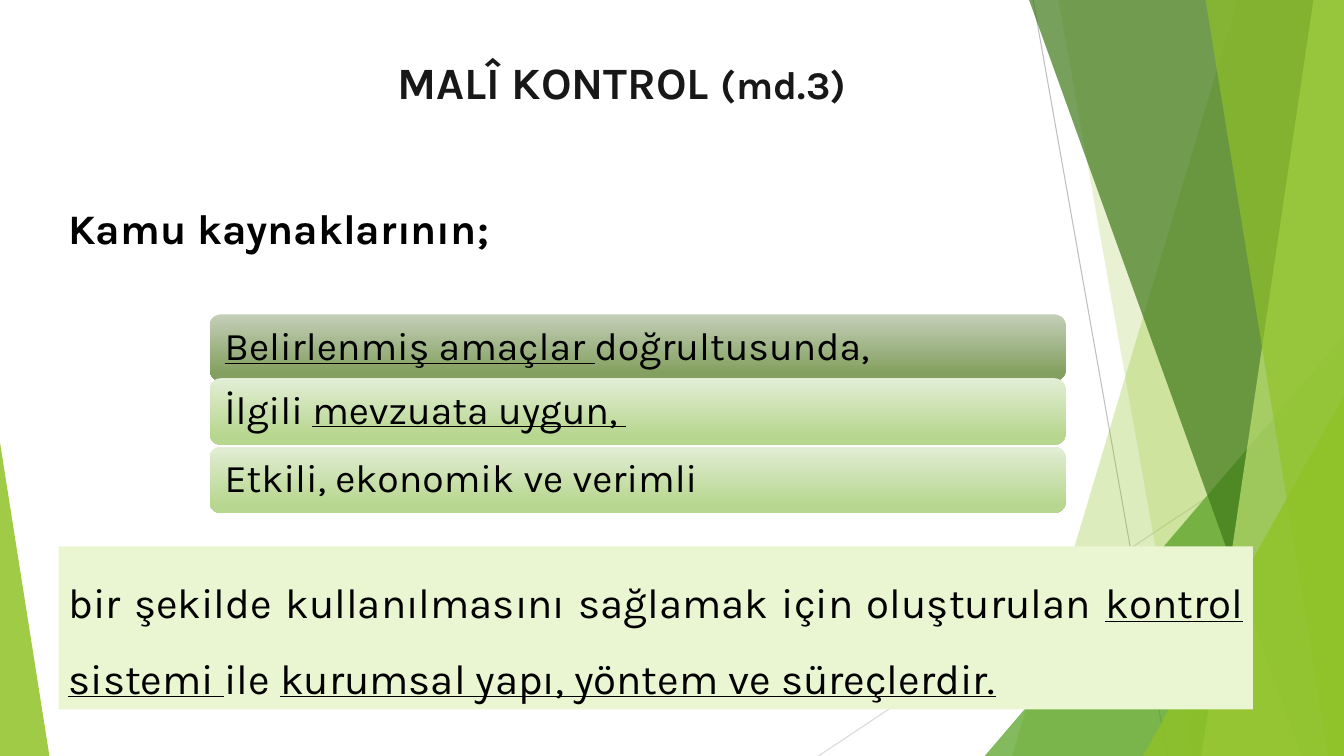
from dataclasses import dataclass

from pptx import Presentation
from pptx.dml.color import RGBColor
from pptx.enum.shapes import MSO_CONNECTOR as Conn, MSO_SHAPE as Shape
from pptx.enum.text import MSO_ANCHOR as Anchor, PP_ALIGN as Align
from pptx.oxml.xmlchemy import OxmlElement
from pptx.util import Pt


@dataclass(frozen=True)
class Theme:
    font: str = "Karla"
    title_size: float = 32
    body_size: float = 30
    bar_size: float = 28
    title: str = "181818"
    text: str = "000000"
    white: str = "FFFFFF"
    panel: str = "EAF6D1"
    rule_dark: str = "BFBFBF"
    rule_light: str = "D9D9D9"
    lime: str = "90C226"
    pale_lime: str = "C0E474"
    green: str = "54A021"
    forest: str = "3F7819"
    olive_bar: tuple[str, str] = ("C4CFB8", "84A060")
    lime_bar: tuple[str, str] = ("E2EED5", "B7D68F")


@dataclass(frozen=True)
class Box:
    x: float
    y: float
    w: float
    h: float


@dataclass(frozen=True)
class Run:
    text: str
    underline: bool = False
    size: float | None = None


@dataclass(frozen=True)
class Style:
    size: float
    color: str
    bold: bool = False
    align: Align = Align.LEFT
    spacing: float = 1.0
    inset: tuple[float, float] = (7.2, 3.6)
    anchor: Anchor = Anchor.TOP


@dataclass(frozen=True)
class Rule:
    x1: float
    y1: float
    x2: float
    y2: float
    color: str


@dataclass(frozen=True)
class Facet:
    top_x: float
    bottom_x: float
    color: str
    alpha: int


@dataclass(frozen=True)
class Wedge:
    box: Box
    apex: float
    color: str
    alpha: int


@dataclass(frozen=True)
class Bar:
    colors: tuple[str, str]
    y: float
    runs: tuple[Run, ...]


T = Theme()
WIDTH, HEIGHT = 960, 540
BAR_X, BAR_W, BAR_H, BAR_PAD = 149.8, 611.3, 47.5, 2.3

RULES = (
    Rule(738, 0, 833.8, HEIGHT, T.rule_dark),
    Rule(WIDTH, 290.2, 584.6, HEIGHT, T.rule_light),
)
BACKDROP = (
    Facet(884.2, 722.9, T.lime, 30),
    Facet(756, 851.8, T.lime, 20),
    Wedge(Box(703.4, 239.8, 256.6, 300.2), 1, T.green, 72),
    Facet(735.1, 929.5, T.forest, 70),
    Facet(938.2, 858.2, T.pale_lime, 70),
    Facet(861.1, 949, T.lime, 65),
    Wedge(Box(816.5, 283, 143.5, 257), 1, T.lime, 80),
    Wedge(Box(0, 316.1, 35.3, 223.9), 0, T.lime, 85),
)
BARS = (
    Bar(T.olive_bar, 224.6, (Run("Belirlenmiş amaçlar ", True), Run("doğrultusunda,"))),
    Bar(T.lime_bar, 270.2, (Run("İlgili "), Run("mevzuata uygun, ", True))),
    Bar(T.lime_bar, 319, (Run("Etkili, ekonomik ve verimli"),)),
)
TITLE = Style(T.title_size, T.title, bold=True, align=Align.CENTER)
LEAD = Style(T.body_size, T.text, bold=True, align=Align.JUSTIFY, spacing=1.5)
BODY = Style(T.body_size, T.text, align=Align.JUSTIFY, spacing=1.5)
BAR_TEXT = Style(T.bar_size, T.text, spacing=0.9, inset=(8.4, 8.4), anchor=Anchor.MIDDLE)


def rgb(color: str) -> RGBColor:
    """Turn a hex string into a colour."""
    return RGBColor.from_string(color)


def paint(s, color: str, alpha: int = 100) -> None:
    """Fill a shape with a flat colour, without line or shadow."""
    s.shadow.inherit = False
    s.line.fill.background()
    s.fill.solid()
    s.fill.fore_color.rgb = rgb(color)
    if alpha < 100:
        node = OxmlElement("a:alpha")
        node.set("val", str(alpha * 1000))
        s.fill._xPr.find(".//{*}srgbClr").append(node)


def add_preset(slide, kind: Shape, box: Box):
    """Add a preset shape in the given box."""
    return slide.shapes.add_shape(kind, Pt(box.x), Pt(box.y), Pt(box.w), Pt(box.h))


def add_rule(slide, rule: Rule) -> None:
    """Draw a thin straight line."""
    ends = (Pt(v) for v in (rule.x1, rule.y1, rule.x2, rule.y2))
    s = slide.shapes.add_connector(Conn.STRAIGHT, *ends)
    s.line.color.rgb = rgb(rule.color)
    s.line.width = Pt(0.75)
    s._element.spPr.append(OxmlElement("a:effectLst"))


def add_facet(slide, facet: Facet) -> None:
    """Draw a full-height panel with a slanted left edge."""
    builder = slide.shapes.build_freeform(Pt(facet.top_x), 0)
    corners = ((WIDTH, 0), (WIDTH, HEIGHT), (facet.bottom_x, HEIGHT))
    builder.add_line_segments([(Pt(x), Pt(y)) for x, y in corners], close=True)
    paint(builder.convert_to_shape(), facet.color, facet.alpha)


def add_wedge(slide, wedge: Wedge) -> None:
    """Draw a right-angled triangle."""
    s = add_preset(slide, Shape.ISOSCELES_TRIANGLE, wedge.box)
    s.adjustments[0] = wedge.apex
    paint(s, wedge.color, wedge.alpha)


def write(s, runs: tuple[Run, ...], style: Style) -> None:
    """Put one styled paragraph in a shape."""
    tf = s.text_frame
    tf.word_wrap = True
    tf.vertical_anchor = style.anchor
    tf.margin_left = tf.margin_right = Pt(style.inset[0])
    tf.margin_top = tf.margin_bottom = Pt(style.inset[1])
    p = tf.paragraphs[0]
    p.alignment = style.align
    p.line_spacing = style.spacing
    p.font.name = T.font
    p.font.size = Pt(style.size)
    p.font.bold = style.bold
    p.font.color.rgb = rgb(style.color)
    for run in runs:
        r = p.add_run()
        r.text = run.text
        if run.underline:
            r.font.underline = True
        if run.size:
            r.font.size = Pt(run.size)


def add_text(slide, box: Box, runs: tuple[Run, ...], style: Style) -> None:
    """Add a text box."""
    write(slide.shapes.add_textbox(Pt(box.x), Pt(box.y), Pt(box.w), Pt(box.h)), runs, style)


def add_panel(slide, box: Box, color: str, runs: tuple[Run, ...], style: Style) -> None:
    """Add a filled rectangle with text."""
    s = add_preset(slide, Shape.RECTANGLE, box)
    paint(s, color)
    write(s, runs, style)


def add_bar(slide, bar: Bar) -> None:
    """Add a rounded gradient bar with its text."""
    s = add_preset(slide, Shape.ROUNDED_RECTANGLE, Box(BAR_X, bar.y, BAR_W, BAR_H))
    s.shadow.inherit = False
    s.line.fill.background()
    s.fill.gradient()
    s.fill.gradient_angle = 270
    for stop, color, position in zip(s.fill.gradient_stops, bar.colors, (0, 0.88)):
        stop.color.rgb = rgb(color)
        stop.position = position
    inner = Box(BAR_X + BAR_PAD, bar.y + BAR_PAD, BAR_W - 2 * BAR_PAD, BAR_H - 2 * BAR_PAD)
    add_text(slide, inner, bar.runs, BAR_TEXT)


def main() -> None:
    """Build the slide and save it."""
    prs = Presentation()
    prs.slide_width, prs.slide_height = Pt(WIDTH), Pt(HEIGHT)
    slide = prs.slides.add_slide(prs.slide_layouts[6])
    for rule in RULES:
        add_rule(slide, rule)
    for item in BACKDROP:
        (add_facet if isinstance(item, Facet) else add_wedge)(slide, item)
    add_text(slide, Box(51.8, 35.3, 784.8, 56.9),
             (Run("MALÎ KONTROL "), Run("(md.3)", size=T.bar_size)), TITLE)
    add_panel(slide, Box(41.8, 390.2, 853.2, 116.6), T.panel,
              (Run("bir şekilde kullanılmasını sağlamak için oluşturulan "),
               Run("kontrol sistemi ", True), Run("ile "),
               Run("kurumsal yapı, yöntem ve süreçlerdir.", True)), BODY)
    add_panel(slide, Box(41.8, 123.1, 383.8, 54.7), T.white, (Run("Kamu kaynaklarının;"),), LEAD)
    for bar in BARS:
        add_bar(slide, bar)
    prs.save("out.pptx")


if __name__ == "__main__":
    main()
